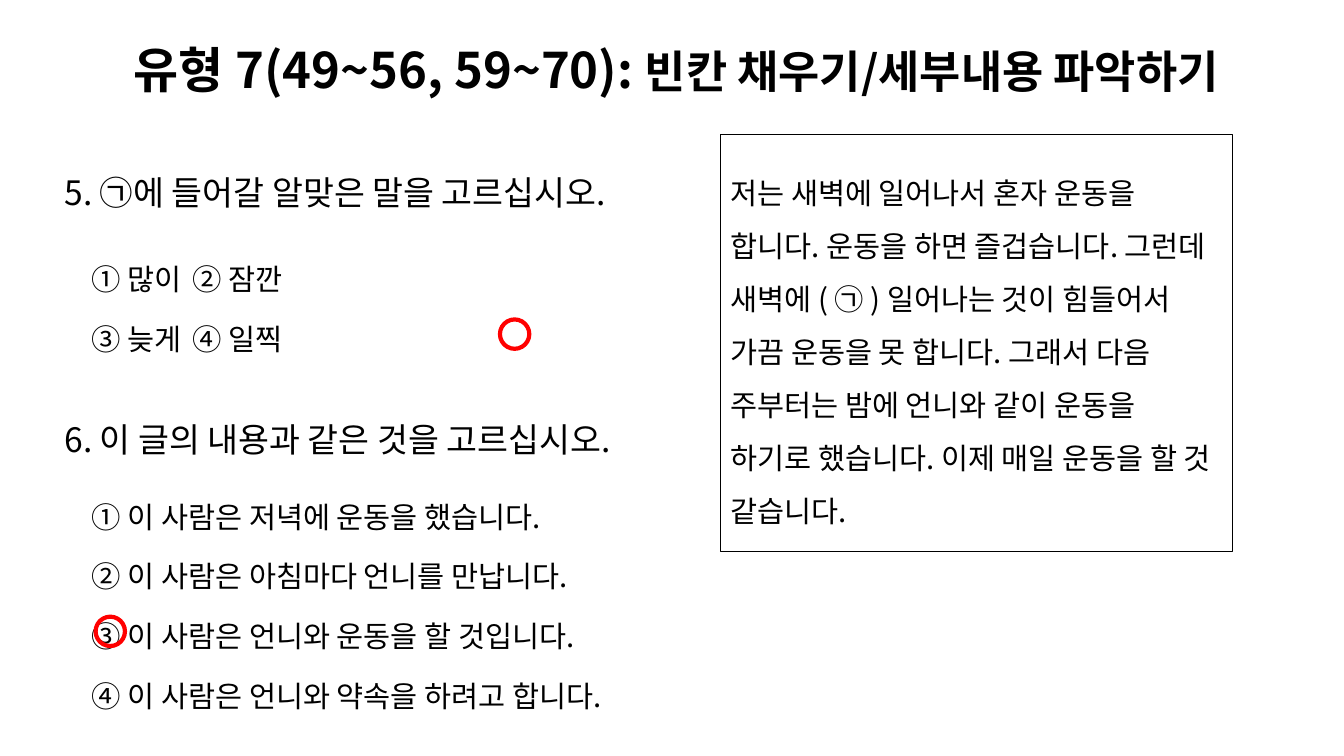
from pptx import Presentation
from pptx.dml.color import RGBColor
from pptx.enum import shapes, text
from pptx.oxml import xmlchemy as xml
from pptx.util import Cm, Pt

BLACK = RGBColor(0, 0, 0)
WHITE = RGBColor(255, 255, 255)
RED = RGBColor(255, 0, 0)
FONT = "Noto Sans CJK KR"

TITLE = [("유형 7(49~56, 59~70): ", 35), ("빈칸 채우기/세부내용 파악하기", 32)]
ASKS = ["5. ㉠에 들어갈 알맞은 말을 고르십시오.", "6. 이 글의 내용과 같은 것을 고르십시오."]
WORDS = ["① 많이\t② 잠깐", "③ 늦게\t④ 일찍"]
CLAIMS = [
    "① 이 사람은 저녁에 운동을 했습니다.",
    "② 이 사람은 아침마다 언니를 만납니다.",
    "③ 이 사람은 언니와 운동을 할 것입니다.",
    "④ 이 사람은 언니와 약속을 하려고 합니다.",
]
STORY = (
    "저는 새벽에 일어나서 혼자 운동을 합니다. 운동을 하면 즐겁습니다. "
    "그런데 새벽에 ( ㉠ ) 일어나는 것이 힘들어서 가끔 운동을 못 합니다. "
    "그래서 다음 주부터는 밤에 언니와 같이 운동을 하기로 했습니다. "
    "이제 매일 운동을 할 것 같습니다."
)
BODIES = [
    (1, [ASKS[0]], (1.37, 4.22, 22.28, 1.24), 24, 1),
    (2, WORDS, (2.06, 6.5, 23.14, 2.11), 21, 1.5),
    (3, [ASKS[1]], (1.37, 10.44, 22.28, 1.24), 24, 1),
    (4, CLAIMS, (2.06, 12.42, 21.59, 5.26), 21, 1.5),
]
FRAME = (18.16, 3.4, 12.9, 10.49)
RINGS = [(12.6, 8.05), (2.41, 15.54)]
RING = 0.74
TAB = 7.65


def place(shape, box):
    shape.left, shape.top, shape.width, shape.height = map(Cm, box)


def style(run, size, bold=False):
    font = run.font
    font.name, font.size, font.bold = FONT, Pt(size), bold
    font.color.rgb = BLACK
    face = xml.OxmlElement("a:ea")
    face.set("typeface", FONT)
    font._element.find("{*}latin").addnext(face)


def setup(frame):
    frame.word_wrap = True
    frame.auto_size = text.MSO_AUTO_SIZE.NONE
    frame.vertical_anchor = text.MSO_ANCHOR.MIDDLE


def write(shape, lines, size, gap):
    frame = shape.text_frame
    setup(frame)
    frame.text = "\n".join(lines)
    for i, par in enumerate(frame.paragraphs):
        props = par._p.get_or_add_pPr()
        props.set("marL", "0")
        props.set("indent", "0")
        props.append(xml.OxmlElement("a:buNone"))
        if "\t" in lines[i]:
            tabs = xml.OxmlElement("a:tabLst")
            stop = xml.OxmlElement("a:tab")
            stop.set("pos", str(Cm(TAB)))
            stop.set("algn", "l")
            tabs.append(stop)
            props.append(tabs)
        par.alignment = text.PP_ALIGN.LEFT
        par.line_spacing = gap
        par.space_before = Pt(5 if i else 0)
        for run in par.runs:
            style(run, size)


def draw(kind, box, color, width):
    shape = slide.shapes.add_shape(kind, *map(Cm, box))
    shape.shadow.inherit = False
    shape.line.color.rgb = color
    shape.line.width = Pt(width)
    return shape


deck = Presentation()
deck.slide_width, deck.slide_height = Cm(33.87), Cm(19.05)
slide = deck.slides.add_slide(deck.slide_layouts[4])

title = slide.shapes.title
place(title, (3.12, 0.76, 30.3, 1.93))
setup(title.text_frame)
head = title.text_frame.paragraphs[0]
head.alignment = text.PP_ALIGN.LEFT
for words, size in TITLE:
    run = head.add_run()
    run.text = words
    style(run, size, True)

for idx, lines, box, size, gap in BODIES:
    body = slide.placeholders[idx]
    place(body, box)
    write(body, lines, size, gap)

story = draw(shapes.MSO_SHAPE.RECTANGLE, FRAME, BLACK, 0)
story.fill.solid()
story.fill.fore_color.rgb = WHITE
write(story, [STORY], 21, 1.5)

for x, y in RINGS:
    ring = draw(shapes.MSO_SHAPE.OVAL, (x, y, RING, RING), RED, 3)
    ring.fill.background()

deck.save("out.pptx")
